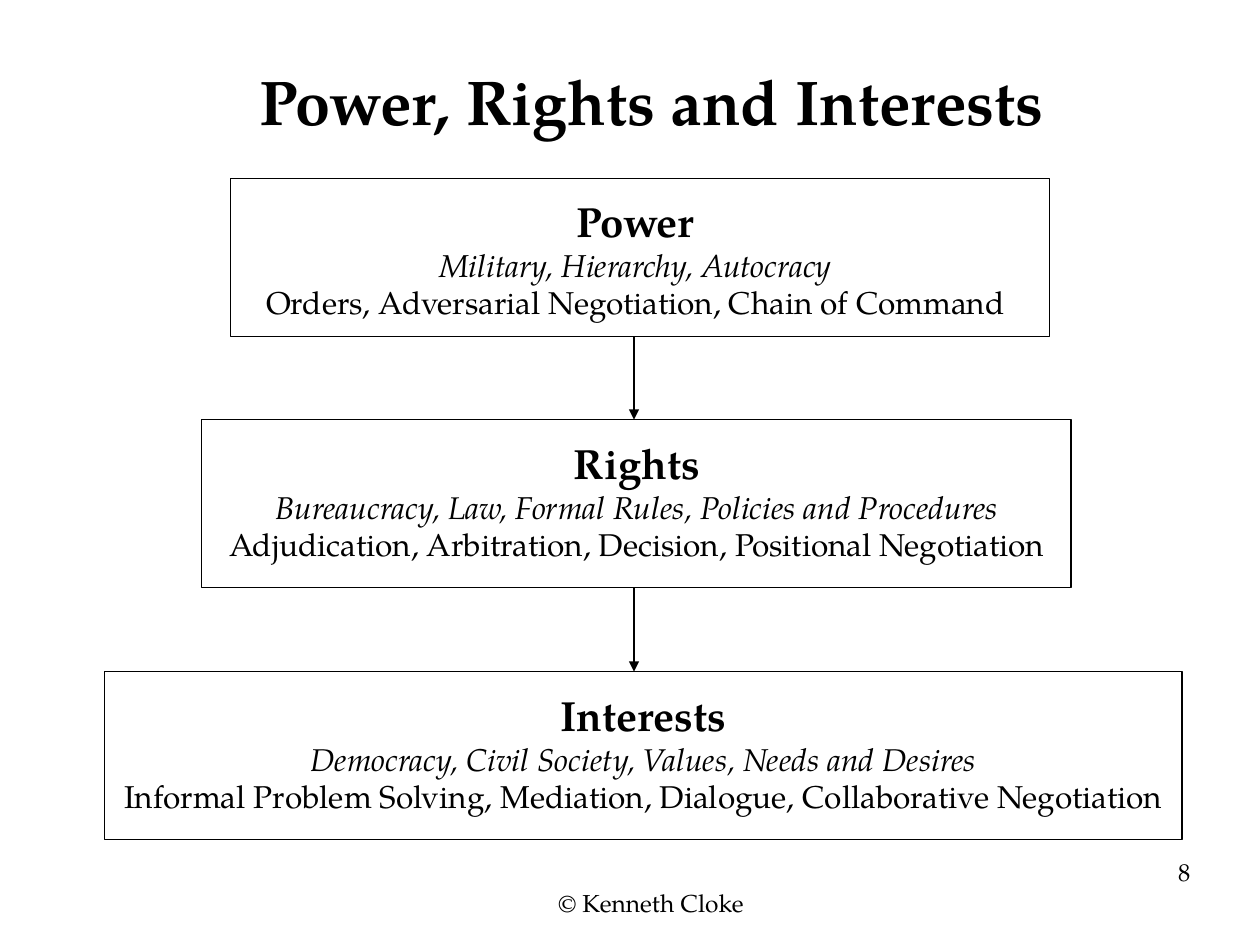
from dataclasses import dataclass

from lxml.etree import SubElement
from pptx import Presentation
from pptx.dml.color import RGBColor
from pptx.enum.shapes import MSO_CONNECTOR, MSO_SHAPE
from pptx.enum.text import MSO_ANCHOR, MSO_AUTO_SIZE, PP_ALIGN
from pptx.oxml.ns import qn
from pptx.util import Cm, Pt

FACE = "TeX Gyre Pagella"
INK = "000000"
AXIS = 12.78  # x of both arrows
TITLE = {"size": Pt(36), "bold": True}
HEAD = {"size": Pt(24), "bold": True}
KIND = {"size": Pt(18), "italic": True}
MEANS = {"size": Pt(18)}
SMALL = {"size": Pt(14)}


@dataclass
class Area:
    left: float
    top: float
    width: float
    height: float

    def spans(self) -> list:
        return [Cm(v) for v in (self.left, self.top, self.width, self.height)]


@dataclass
class Stage:
    frame: Area
    label: Area
    name: str
    kind: str
    means: str


STAGES = [
    Stage(Area(4.65, 3.6, 16.51, 3.18), Area(5, 3.81, 15.62, 2.82),
          "Power", "Military, Hierarchy, Autocracy",
          "Orders, Adversarial Negotiation, Chain of Command"),
    Stage(Area(4.06, 8.46, 17.53, 3.38), Area(4.24, 8.69, 17.2, 2.82),
          "Rights", "Bureaucracy, Law, Formal Rules, Policies and Procedures",
          "Adjudication, Arbitration, Decision, Positional Negotiation"),
    Stage(Area(2.11, 13.54, 21.72, 3.38), Area(2.11, 13.77, 21.72, 2.82),
          "Interests", "Democracy, Civil Society, Values, Needs and Desires",
          "Informal Problem Solving, Mediation, Dialogue, Collaborative Negotiation"),
]


def color(target, code: str) -> None:
    target.rgb = RGBColor.from_string(code)


def write(frame, rows: list, align: PP_ALIGN) -> None:
    """Fill a text frame with one paragraph per (text, format) row."""
    for i, (text, form) in enumerate(rows):
        para = frame.paragraphs[0] if i == 0 else frame.add_paragraph()
        para.alignment = align
        run = para.add_run()
        run.text = text
        for key, value in {"name": FACE, **form}.items():
            setattr(run.font, key, value)
        color(run.font.color, INK)


def add_text(slide, area: Area, rows: list, align: PP_ALIGN) -> None:
    frame = slide.shapes.add_textbox(*area.spans()).text_frame
    frame.word_wrap = False
    frame.auto_size = MSO_AUTO_SIZE.SHAPE_TO_FIT_TEXT
    write(frame, rows, align)


def outline(line) -> None:
    color(line.color, INK)
    line.width = Pt(0.75)


def add_frame(slide, area: Area) -> None:
    box = slide.shapes.add_shape(MSO_SHAPE.RECTANGLE, *area.spans())
    box.shadow.inherit = False
    box.fill.background()
    outline(box.line)


def add_arrow(slide, start: float, end: float) -> None:
    arrow = slide.shapes.add_connector(
        MSO_CONNECTOR.STRAIGHT, Cm(AXIS), Cm(start), Cm(AXIS), Cm(end))
    outline(arrow.line)
    SubElement(arrow.line._get_or_add_ln(), qn("a:tailEnd"), type="triangle")
    SubElement(arrow._element.spPr, qn("a:effectLst"))


def main() -> None:
    deck = Presentation()
    deck.slide_width, deck.slide_height = Cm(25.4), Cm(19.05)
    slide = deck.slides.add_slide(deck.slide_layouts[5])

    # Title
    title = slide.shapes.title
    title.left, title.top, title.width, title.height = Area(
        2.34, 0.43, 21.59, 3.18).spans()
    title.text_frame.vertical_anchor = MSO_ANCHOR.MIDDLE
    title.text_frame.auto_size = MSO_AUTO_SIZE.NONE
    write(title.text_frame, [("Power, Rights and Interests", TITLE)],
          PP_ALIGN.CENTER)

    # Stages
    for stage in STAGES:
        add_frame(slide, stage.frame)
        rows = [(stage.name, HEAD), (stage.kind, KIND), (stage.means, MEANS)]
        add_text(slide, stage.label, rows, PP_ALIGN.CENTER)

    # Arrows from each stage to the next
    for above, below in zip(STAGES, STAGES[1:]):
        add_arrow(slide, above.frame.top + above.frame.height, below.frame.top)

    # Page number and credit
    add_text(slide, Area(23.5, 17.15, 1.02, 0.86), [("8", SMALL)], PP_ALIGN.LEFT)
    add_text(slide, Area(11, 17.78, 4.29, 0.86),
             [("© Kenneth Cloke", SMALL)], PP_ALIGN.LEFT)

    deck.save("out.pptx")


if __name__ == "__main__":
    main()
